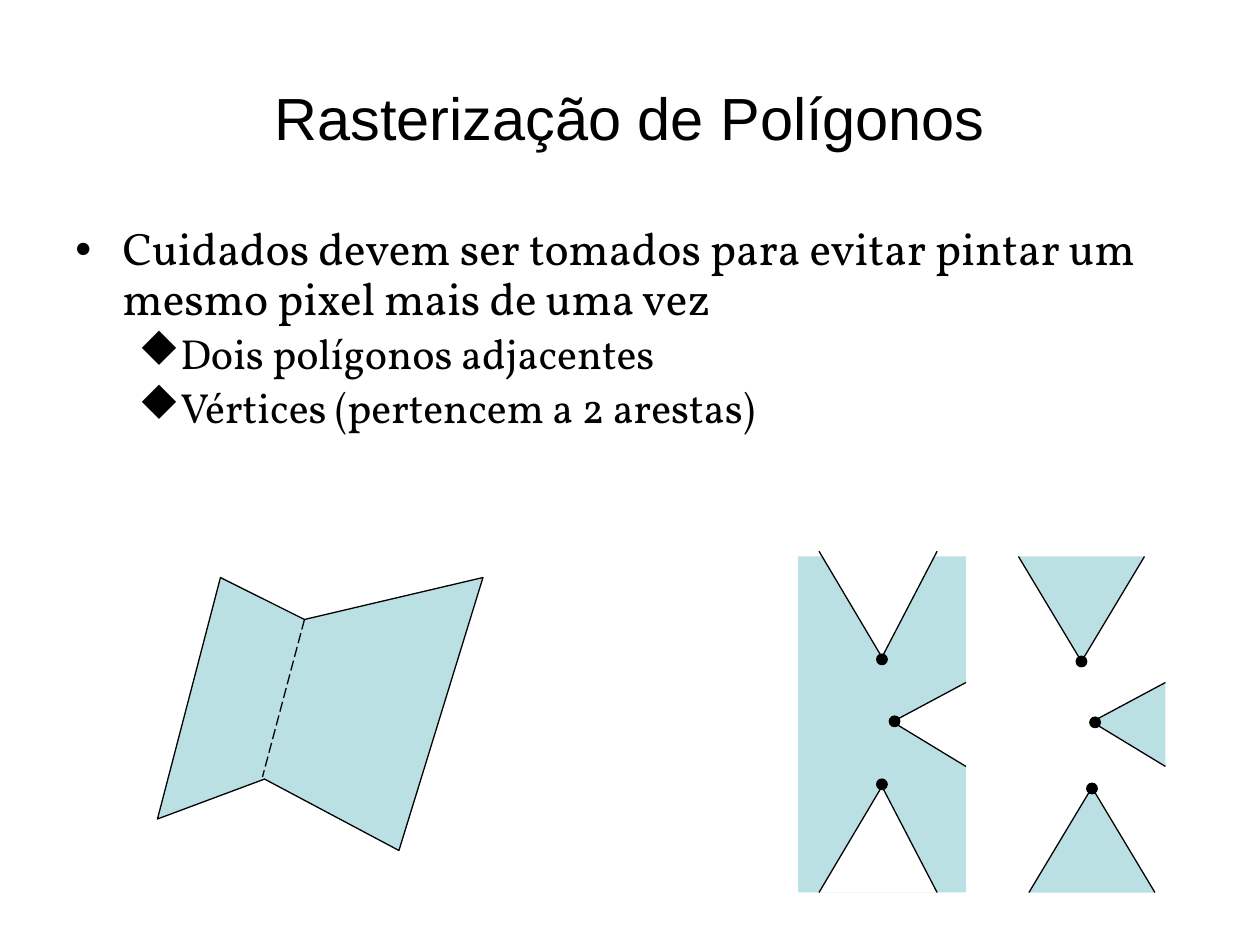
from pptx import Presentation
from pptx.dml.color import RGBColor
from pptx.enum.dml import MSO_LINE
from pptx.enum.shapes import MSO_CONNECTOR, MSO_SHAPE
from pptx.enum.text import MSO_ANCHOR, PP_ALIGN
from pptx.oxml.ns import qn
from pptx.util import Inches, Pt
from lxml.etree import SubElement

UNIT = Inches(1) // 12
BLACK, WHITE, AQUA = "000000", "FFFFFF", "BBE0E3"


def grid(*values):
    return [round(value * UNIT) for value in values]


def paint(shape, fill, line=None):
    shape.shadow.inherit = False
    shape.fill.solid()
    shape.fill.fore_color.rgb = RGBColor.from_string(fill)
    if line:
        shape.line.color.rgb = RGBColor.from_string(line)
        shape.line.width = Pt(0.75)
    else:
        shape.line.fill.background()


presentation = Presentation()
presentation.slide_width, presentation.slide_height = grid(120, 90)
slide = presentation.slides.add_slide(presentation.slide_layouts[5])
shapes = slide.shapes

title = shapes.title
title.left, title.top, title.width, title.height = grid(6, 3.6, 108, 15)
title.text_frame.text = "Rasterização de Polígonos"
title.text_frame.vertical_anchor = MSO_ANCHOR.MIDDLE
heading = title.text_frame.paragraphs[0]
heading.alignment = PP_ALIGN.CENTER
heading.runs[0].font.name = "Arial"
heading.runs[0].font.size = Pt(34)
heading.runs[0].font.color.rgb = RGBColor.from_string(BLACK)

level_styles = [
    (26, "Arial", "•", 4.5, 4.5),
    (24, "Wingdings", "u", 9.75, 3.75),
]
bullets = [
    ("Cuidados devem ser tomados para evitar pintar um mesmo pixel mais de uma vez", 0),
    ("Dois polígonos adjacentes", 1),
    ("Vértices (pertencem a 2 arestas)", 1),
]
body = shapes.add_textbox(*grid(6, 21, 108, 22))
body.text_frame.word_wrap = True
body.text_frame.text = "\n".join(text for text, level in bullets)
for paragraph, (_, level) in zip(body.text_frame.paragraphs, bullets):
    size, mark_font, mark, margin, hanging = level_styles[level]
    paragraph.level = level
    paragraph.line_spacing = 0.9
    paragraph.space_before = Pt(size * 0.2)
    font = paragraph.runs[0].font
    font.name = "Vollkorn"
    font.size = Pt(size)
    font.color.rgb = RGBColor.from_string(BLACK)
    properties = paragraph._p.get_or_add_pPr()
    properties.set("marL", str(grid(margin)[0]))
    properties.set("indent", str(-grid(hanging)[0]))
    bullet_font = SubElement(properties, qn("a:buFont"))
    bullet_font.set("typeface", mark_font)
    if mark_font == "Wingdings":
        bullet_font.set("pitchFamily", "2")
        bullet_font.set("charset", "2")
    SubElement(properties, qn("a:buChar")).set("char", mark)

for top in (53, 68.9):
    paint(shapes.add_shape(MSO_SHAPE.RECTANGLE, *grid(76, top, 16, 16.1)), AQUA)

adjacent_polygons = [(21, 55), (29, 59), (46, 55), (38, 81), (25.2, 74.2), (15, 78)]
outlines = [
    (adjacent_polygons, True, AQUA),
    ([(97, 53), (103, 63), (109, 53)], False, AQUA),
    ([(78, 52.5), (84, 62.6), (89.25, 52.5)], False, WHITE),
    ([(98, 85), (104, 75), (110, 85)], False, AQUA),
    ([(78, 85), (84, 74.9), (89.25, 85)], False, WHITE),
    ([(92, 65), (85, 68.75), (92, 73)], False, WHITE),
    ([(111, 65), (104, 68.75), (111, 73)], False, AQUA),
]
for points, closed, fill in outlines:
    start, *others = [grid(*point) for point in points]
    builder = shapes.build_freeform(*start)
    builder.add_line_segments(others, close=closed)
    paint(builder.convert_to_shape(), fill, BLACK)

shared_edge = shapes.add_connector(MSO_CONNECTOR.STRAIGHT, *grid(29, 59, 25, 74))
shared_edge.line.color.rgb = RGBColor.from_string(BLACK)
shared_edge.line.width = Pt(0.75)
shared_edge.line.dash_style = MSO_LINE.LONG_DASH
SubElement(shared_edge._element.spPr, qn("a:effectLst"))

vertices = [(85.2, 68.7), (84, 62.8), (84, 74.7), (103, 63), (104.3, 68.8), (104, 75.1)]
for x, y in vertices:
    paint(shapes.add_shape(MSO_SHAPE.OVAL, *grid(x - 0.5, y - 0.5, 1, 1)), BLACK, BLACK)

presentation.save("out.pptx")
